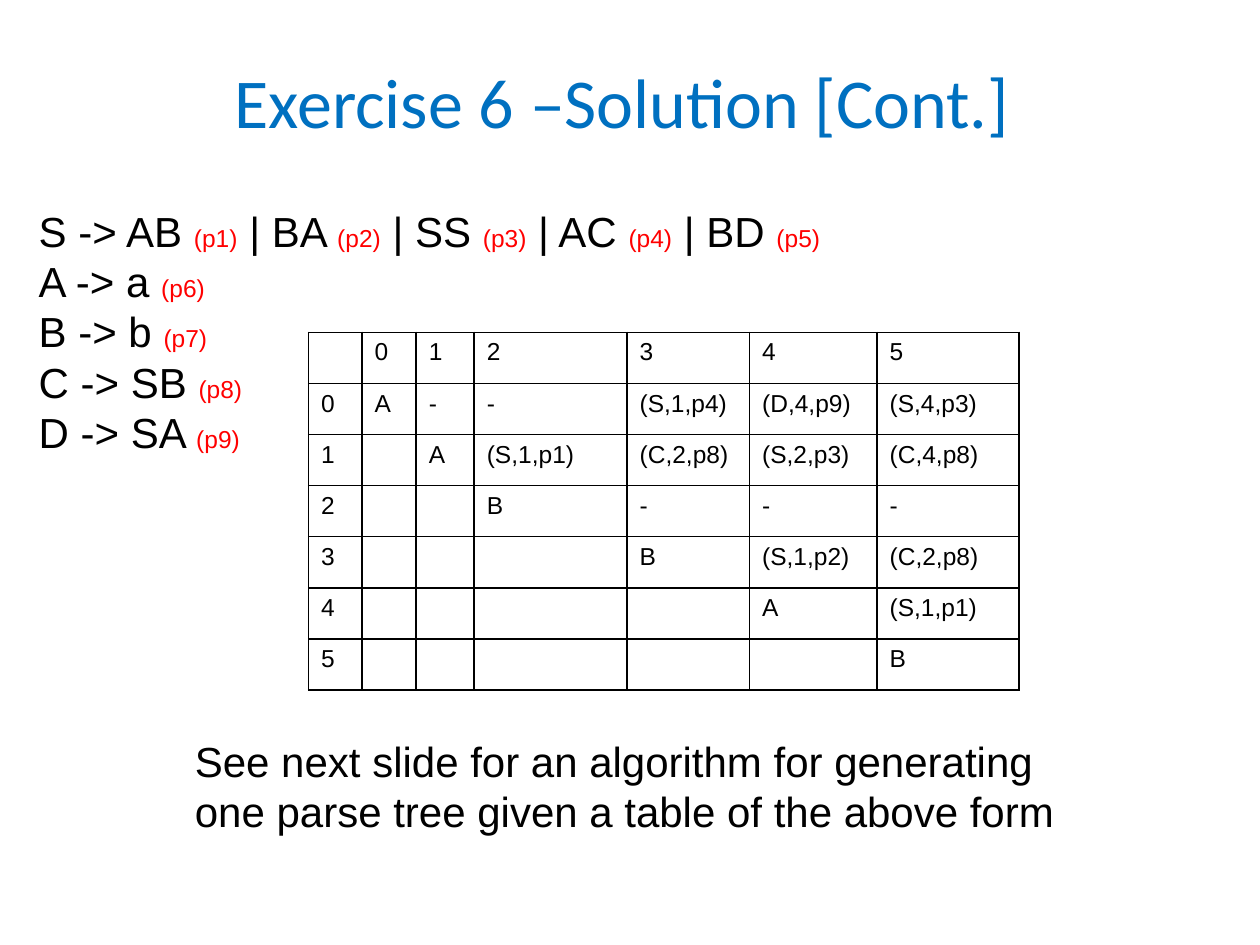
from lxml import etree
from pptx import Presentation
from pptx.dml.color import RGBColor
from pptx.enum import text
from pptx.oxml import ns
from pptx.util import Cm, Pt

BLACK, RED, BLUE = "000000", "FF0000", "0070C0"

GRAMMAR = [
    ["S -> AB ", "(p1)", " | BA ", "(p2)", " | SS ", "(p3)",
     " | AC ", "(p4)", " | BD ", "(p5)"],
    ["A -> a ", "(p6)", " "],
    ["B -> b ", "(p7)"],
    ["C -> SB ", "(p8)"],
    ["D -> SA ", "(p9)"],
]

PARSE_ROWS = [
    ["", "0", "1", "2", "3", "4", "5"],
    ["0", "A", "-", "-", "(S,1,p4)", "(D,4,p9)", "(S,4,p3)"],
    ["1", "", "A", "(S,1,p1)", "(C,2,p8)", "(S,2,p3)", "(C,4,p8)"],
    ["2", "", "", "B", "-", "-", "-"],
    ["3", "", "", "", "B", "(S,1,p2)", "(C,2,p8)"],
    ["4", "", "", "", "", "A", "(S,1,p1)"],
    ["5", "", "", "", "", "", "B"],
]
COLUMN_WIDTHS = [1.08, 1.09, 1.17, 3.08, 2.47, 2.57, 2.86]
ROW_HEIGHT = 1.03


def colour(value):
    return RGBColor.from_string(value)


def format_run(run, size, shade, face="Arial"):
    run.font.size = Pt(size)
    run.font.name = face
    run.font.color.rgb = colour(shade)


def set_title(slide, wording):
    title = slide.shapes.title
    title.left, title.top, title.width, title.height = Cm(1.27), Cm(0.43), Cm(22.86), Cm(3.18)
    frame = title.text_frame
    frame.text = wording
    frame.vertical_anchor = text.MSO_ANCHOR.MIDDLE
    frame.paragraphs[0].alignment = text.PP_ALIGN.CENTER
    format_run(frame.paragraphs[0].runs[0], 40, BLUE, "Calibri")


def add_text_frame(slide, left, top, width, height):
    frame = slide.shapes.add_textbox(Cm(left), Cm(top), Cm(width), Cm(height)).text_frame
    frame.word_wrap = True
    return frame


def add_note(slide, wording):
    frame = add_text_frame(slide, 3.68, 14.7, 18.03, 2.31)
    frame.text = wording
    format_run(frame.paragraphs[0].runs[0], 24, BLACK)


def add_grammar(slide):
    frame = add_text_frame(slide, 0.53, 4.01, 18.57, 5.38)
    for number, rule in enumerate(GRAMMAR):
        paragraph = frame.add_paragraph() if number else frame.paragraphs[0]
        for part in rule:
            run = paragraph.add_run()
            run.text = part
            if part.startswith("("):
                format_run(run, 14, RED)
            else:
                format_run(run, 24, BLACK)


def outline_cell(cell):
    properties = cell._tc.get_or_add_tcPr()
    for position, side in enumerate(("lnL", "lnR", "lnT", "lnB")):
        line = etree.Element(ns.qn(f"a:{side}"), w=str(Pt(1)))
        fill = etree.SubElement(line, ns.qn("a:solidFill"))
        etree.SubElement(fill, ns.qn("a:srgbClr"), val=BLACK)
        properties.insert(position, line)


def add_parse_table(slide):
    table = slide.shapes.add_table(
        len(PARSE_ROWS), len(COLUMN_WIDTHS), Cm(6.22), Cm(6.7),
        Cm(sum(COLUMN_WIDTHS)), Cm(ROW_HEIGHT * len(PARSE_ROWS))).table
    table.first_row = False
    table.horz_banding = False
    for column, width in zip(table.columns, COLUMN_WIDTHS):
        column.width = Cm(width)
    for row, entries in zip(table.rows, PARSE_ROWS):
        row.height = Cm(ROW_HEIGHT)
        for cell, entry in zip(row.cells, entries):
            cell.fill.background()
            outline_cell(cell)
            cell.text_frame.text = entry
            for run in cell.text_frame.paragraphs[0].runs:
                format_run(run, 14, BLACK)


def main():
    deck = Presentation()
    deck.slide_width, deck.slide_height = Cm(25.4), Cm(19.05)
    slide = deck.slides.add_slide(deck.slide_layouts[5])
    set_title(slide, "Exercise 6 –Solution [Cont.] ")
    add_parse_table(slide)
    add_note(slide, "See next slide for an algorithm for generating "
                    "one parse tree given a table of the above form")
    add_grammar(slide)
    deck.save("out.pptx")


if __name__ == "__main__":
    main()
